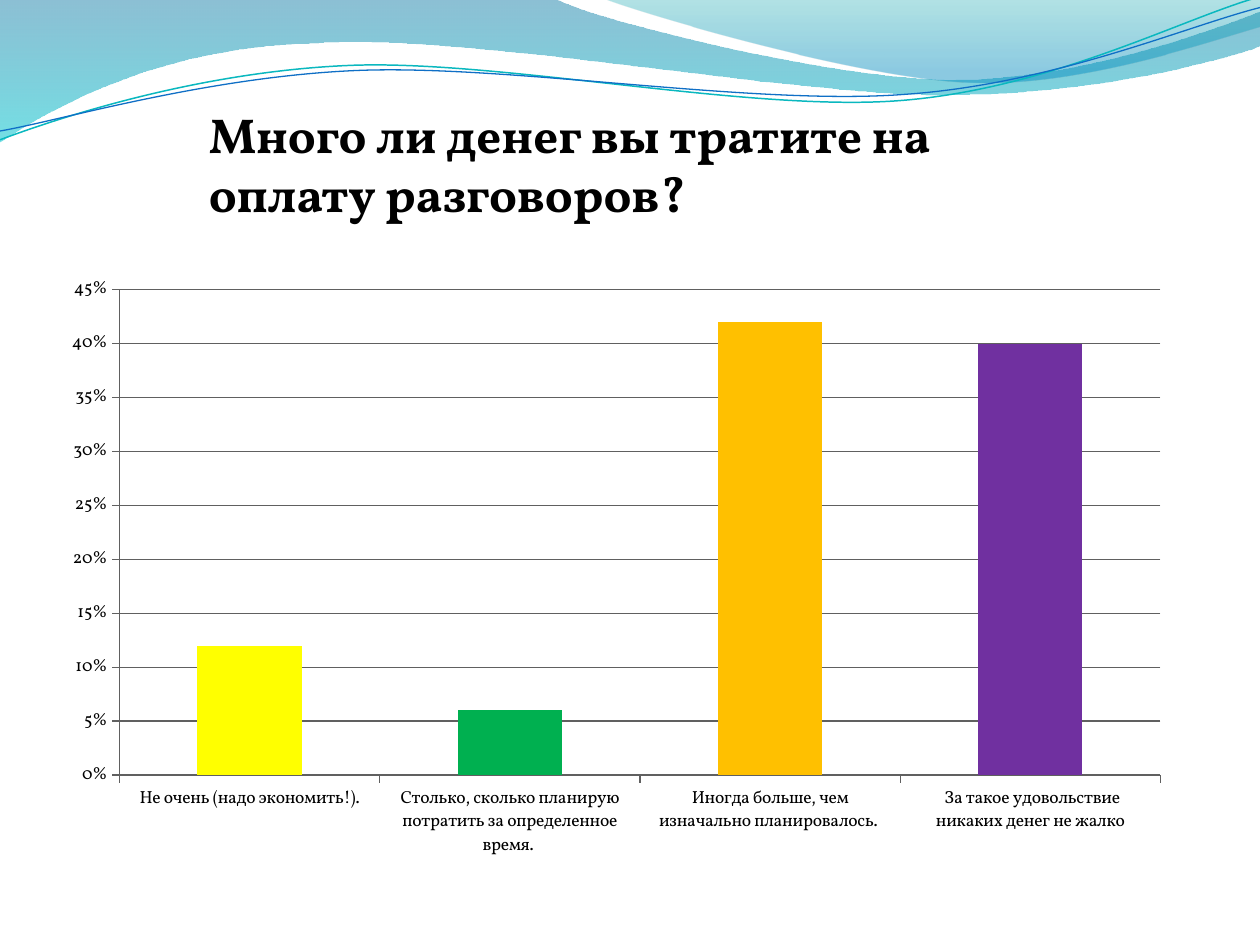
from dataclasses import dataclass

from lxml import etree
from pptx import Presentation
from pptx.chart.data import CategoryChartData
from pptx.dml.color import RGBColor
from pptx.enum.chart import XL_CHART_TYPE, XL_TICK_MARK
from pptx.oxml.ns import qn
from pptx.util import Emu, Inches, Pt

COLUMN = XL_CHART_TYPE.COLUMN_CLUSTERED
OUTSIDE = XL_TICK_MARK.OUTSIDE
FONT = "Vollkorn"
BLACK, AXIS_GREY = "000000", "606060"
COLS, ROWS = 10, 7.5
CELL = Inches(1)


@dataclass(frozen=True)
class Box:
    """Rectangle in grid columns and rows."""
    col: float
    row: float
    cols: float
    rows: float

    def emu(self) -> list[int]:
        """Return left, top, width and height in EMU."""
        return [Emu(int(v * CELL)) for v in (self.col, self.row, self.cols, self.rows)]


@dataclass(frozen=True)
class Stop:
    """Gradient stop with opacity in percent."""
    position: float
    color: str
    opacity: int


@dataclass(frozen=True)
class Wave:
    """Outline of line (one point) and curve (three points) segments."""
    start: tuple
    segments: tuple
    stops: tuple = ()
    line: str = ""
    width: float = 0


@dataclass(frozen=True)
class Answer:
    """Survey answer with its share and column colour."""
    label: str
    share: float
    color: str


WAVES = (
    Wave((0, 0), (
        ((4.4, -0.01),),
        ((4.76, 0.17), (6.64, 0.63), (7.58, 0.63)),
        ((8.53, 0.63), (9.58, 0.26), (10, 0.09)),
        ((10.01, 0.36),),
        ((9.83, 0.44), (8.7, 0.76), (7.46, 0.75)),
        ((6.22, 0.75), (3.82, 0.28), (2.57, 0.34)),
        ((1.29, 0.36), (0.46, 0.83), (-0.01, 1.13)),
        ((0, 0),),
    ), stops=(Stop(0, "0074A1", 45), Stop(1, "00C6CF", 55))),
    Wave((4.79, -0.01), (
        ((5.09, 0.11), (6.82, 0.62), (7.69, 0.65)),
        ((8.56, 0.69), (9.61, 0.32), (10, 0.21)),
        ((10, 0),),
        ((4.79, -0.01),),
    ), stops=(Stop(0, "00A1A9", 30), Stop(0.8, "008BBF", 45))),
    Wave((0, 1.11), (
        ((0.48, 0.93), (1.58, 0.57), (2.77, 0.52)),
        ((3.95, 0.47), (5.93, 0.89), (7.13, 0.8)),
        ((8.33, 0.71), (9.38, 0.15), (9.98, -0.02)),
    ), line="0AB8BF", width=0.85),
    Wave((0, 1.04), (
        ((0.47, 0.96), (1.64, 0.61), (2.83, 0.56)),
        ((4.03, 0.51), (5.97, 0.84), (7.17, 0.75)),
        ((8.36, 0.67), (9.41, 0.21), (10, 0.06)),
    ), line="0F6FC6", width=0.75),
)
ANSWERS = (
    Answer("Не очень (надо экономить!).", 0.12, "FFFF00"),
    Answer("Столько, сколько планирую потратить за определенное время. ", 0.06, "00B050"),
    Answer("Иногда больше, чем изначально планировалось. ", 0.42, "FFC000"),
    Answer(" За такое удовольствие никаких денег не жалко", 0.4, "7030A0"),
)
TITLE = "Много ли денег вы тратите на оплату разговоров?"
TITLE_BOX = Box(1.56, 0.78, 6.37, 1.35)
CHART_BOX = Box(0.39, 2.11, 9, 4.8)


def rgb(color: str) -> RGBColor:
    """Turn a hex string into a colour."""
    return RGBColor.from_string(color)


def bend(sp, segments: tuple) -> None:
    """Join the points of each curve segment into one cubic curve."""
    lines = iter(list(sp._element.spPr.iter(qn("a:lnTo"))))
    for segment in segments:
        steps = [next(lines) for _ in segment]
        if len(steps) == 1:
            continue
        curve = etree.Element(qn("a:cubicBezTo"))
        steps[0].addprevious(curve)
        for step in steps:
            curve.append(step[0])
            step.getparent().remove(step)


def add_wave(slide, wave: Wave) -> None:
    """Draw a gradient band or an open curved line."""
    points = [wave.start, *(point for segment in wave.segments for point in segment)]
    first, *rest = [(round(x * CELL), round(y * CELL)) for x, y in points]
    builder = slide.shapes.build_freeform(*first)
    builder.add_line_segments(rest, close=bool(wave.stops))
    sp = builder.convert_to_shape()
    bend(sp, wave.segments)
    sp.shadow.inherit = False
    if wave.line:
        sp.fill.background()
        sp.line.color.rgb = rgb(wave.line)
        sp.line.width = Pt(wave.width)
        return
    sp.line.fill.background()
    sp.fill.gradient()
    sp.fill.gradient_angle = 270
    for target, stop in zip(sp.fill.gradient_stops, wave.stops):
        target.position = stop.position
        target.color.rgb = rgb(stop.color)
    colors = sp._element.spPr.iter(qn("a:srgbClr"))
    for color, stop in zip(colors, wave.stops):
        etree.SubElement(color, qn("a:alpha")).set("val", str(stop.opacity * 1000))


def add_title(slide, text: str, box: Box) -> None:
    """Add the bold question."""
    tf = slide.shapes.add_textbox(*box.emu()).text_frame
    tf.word_wrap = True
    tf.text = text
    font = tf.paragraphs[0].runs[0].font
    font.name, font.size, font.bold = FONT, Pt(28), True
    font.color.rgb = rgb(BLACK)


def add_answer_chart(slide, answers: tuple[Answer, ...], box: Box) -> None:
    """Add the column chart of answers."""
    data = CategoryChartData(number_format="0%")
    data.categories = [a.label for a in answers]
    data.add_series("Series 1", [a.share for a in answers])
    chart = slide.shapes.add_chart(COLUMN, *box.emu(), data).chart
    chart.has_legend = chart.has_title = False
    chart.font.name, chart.font.size = FONT, Pt(10)
    chart.font.color.rgb = rgb(BLACK)
    plot = chart.plots[0]
    plot.vary_by_categories = False
    plot.gap_width = 150
    series = plot.series[0]
    for i, answer in enumerate(answers):
        fill = series.points[i].format.fill
        fill.solid()
        fill.fore_color.rgb = rgb(answer.color)
    values = chart.value_axis
    values.minimum_scale, values.maximum_scale, values.major_unit = 0, 0.45, 0.05
    values.has_major_gridlines = True
    values.tick_labels.number_format = "0%"
    values.tick_labels.number_format_is_linked = False
    for axis in (chart.category_axis, values):
        axis.major_tick_mark = OUTSIDE
    for part in (chart.category_axis, values, values.major_gridlines):
        part.format.line.color.rgb = rgb(AXIS_GREY)
        part.format.line.width = Pt(0.75)


def main() -> None:
    """Build and save the slide."""
    prs = Presentation()
    prs.slide_width, prs.slide_height = int(COLS * CELL), int(ROWS * CELL)
    s = prs.slides.add_slide(prs.slide_layouts[6])
    for wave in WAVES:
        add_wave(s, wave)
    add_answer_chart(s, ANSWERS, CHART_BOX)
    add_title(s, TITLE, TITLE_BOX)
    prs.save("out.pptx")


if __name__ == "__main__":
    main()
